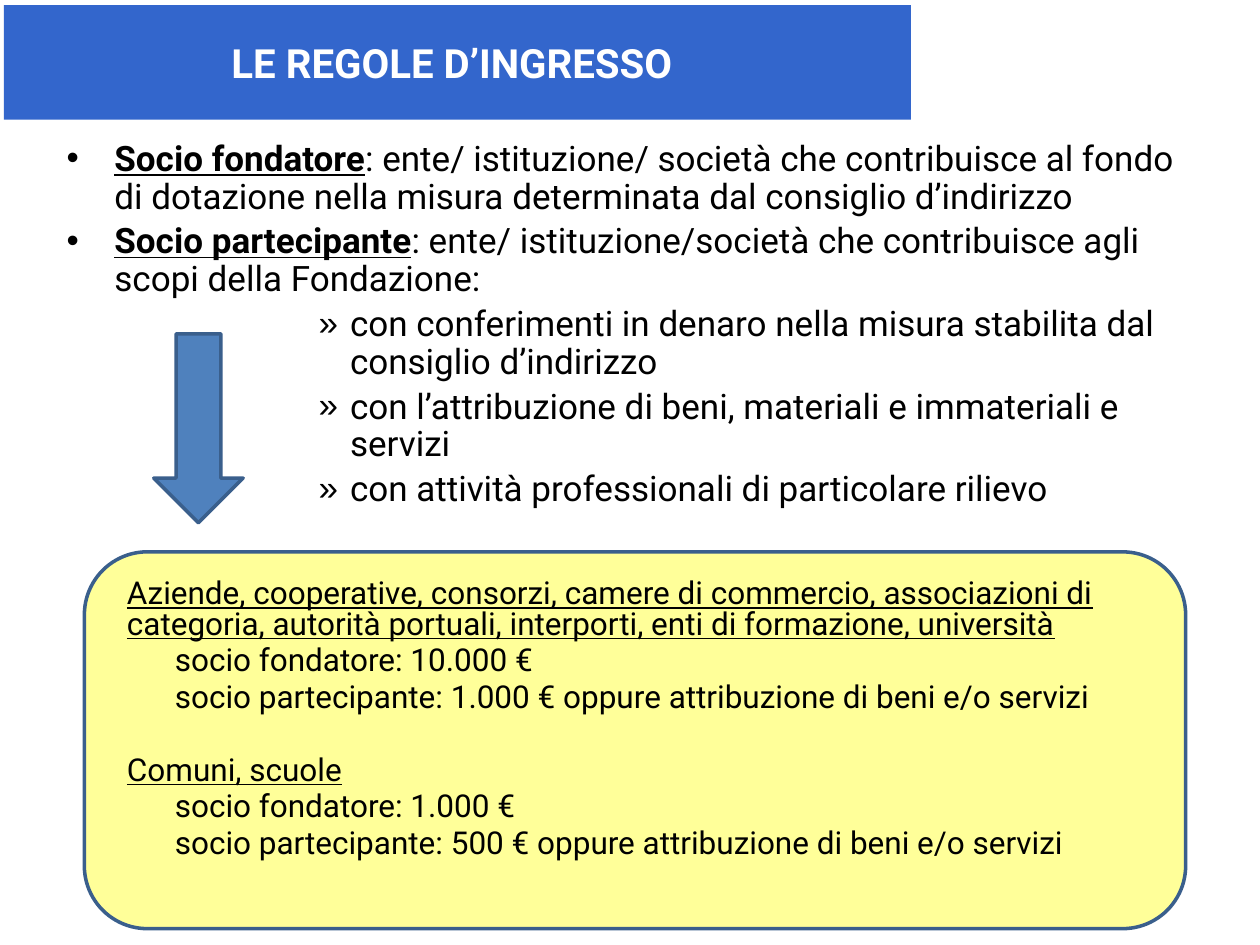
from dataclasses import dataclass

from lxml import etree
from pptx import Presentation, util as u
from pptx.dml.color import RGBColor
from pptx.enum import shapes, text
from pptx.oxml.ns import qn


@dataclass(frozen=True)
class Theme:
    font: str = "Roboto"
    title_size: int = 23
    rules_size: int = 20
    fees_size: int = 18
    line_width: int = 2
    black: str = "000000"
    white: str = "FFFFFF"
    banner: str = "3366CC"
    panel: str = "FFFF99"
    arrow: str = "4F81BD"
    outline: str = "3A5F8C"


THEME = Theme()
WIDTH, HEIGHT = 10, 7.5

TITLE = "LE REGOLE D’INGRESSO "
MEMBERS = [
    ("Socio fondatore", ": ente/ istituzione/ società che contribuisce al fondo di dotazione "
     "nella misura determinata dal consiglio d’indirizzo"),
    ("Socio partecipante", ": ente/ istituzione/società che contribuisce agli scopi della Fondazione:"),
]
CONTRIBUTIONS = [
    "con conferimenti in denaro nella misura stabilita dal consiglio d’indirizzo",
    "con l’attribuzione di beni, materiali e immateriali e servizi",
    "con attività professionali di particolare rilievo",
]
FEES = [
    ("Aziende, cooperative, consorzi, camere di commercio, associazioni di categoria, "
     "autorità portuali, interporti, enti di formazione, università",
     ["socio fondatore: 10.000 €",
      "socio partecipante: 1.000 € oppure attribuzione di beni e/o servizi"]),
    ("Comuni, scuole",
     ["socio fondatore: 1.000 €",
      "socio partecipante: 500 € oppure attribuzione di beni e/o servizi"]),
]
GROUP_GAP = 24.5

PERCENT_BOXES = {
    "title": (0.3, 0.53, 72, 12.13),
    "rules": (4.3, 14.27, 90.6, 42),
    "panel": (6.7, 58.4, 87.4, 39.87),
    "fees": (9.1, 60.8, 83, 35.2),
    "arrow": (12.2, 35.33, 7.1, 20),
}


def box(name):
    extents = (WIDTH, HEIGHT, WIDTH, HEIGHT)
    return [u.Inches(share * extent / 100) for share, extent in zip(PERCENT_BOXES[name], extents)]


def paint(shape, color):
    shape.fill.solid()
    shape.fill.fore_color.rgb = RGBColor.from_string(color)


def style_run(run, size, color=THEME.black, bold=False, underline=False):
    run.font.name = THEME.font
    run.font.size = u.Pt(size)
    run.font.color.rgb = RGBColor.from_string(color)
    run.font.bold = bold
    run.font.underline = underline


def add_outlined(slide, kind, name, color):
    shape = slide.shapes.add_shape(kind, *box(name))
    shape.shadow.inherit = False
    paint(shape, color)
    shape.line.color.rgb = RGBColor.from_string(THEME.outline)
    shape.line.width = u.Pt(THEME.line_width)


def add_text(slide, name):
    frame = slide.shapes.add_textbox(*box(name)).text_frame
    frame.word_wrap = True
    return frame


def next_paragraph(frame, spacing, size, gap=None):
    first = not frame.text
    paragraph = frame.paragraphs[0] if first else frame.add_paragraph()
    paragraph.line_spacing = spacing
    paragraph.space_before = u.Pt(0 if first else gap or size * 0.2)
    return paragraph


def indent(paragraph, left, hanging=0, bullet=None):
    properties = paragraph._p.get_or_add_pPr()
    properties.set("marL", str(u.Inches(left)))
    properties.set("indent", str(-u.Inches(hanging)))
    if bullet:
        etree.SubElement(properties, qn("a:buFont")).set("typeface", "Arial")
        etree.SubElement(properties, qn("a:buChar")).set("char", bullet)


def add_title(slide):
    title = slide.shapes.title
    title.left, title.top, title.width, title.height = box("title")
    paint(title, THEME.banner)
    frame = title.text_frame
    frame.text = TITLE
    frame.auto_size = text.MSO_AUTO_SIZE.NONE
    frame.vertical_anchor = text.MSO_ANCHOR.MIDDLE
    paragraph = frame.paragraphs[0]
    paragraph.alignment = text.PP_ALIGN.CENTER
    style_run(paragraph.runs[0], THEME.title_size, THEME.white, bold=True)


def add_rules(slide):
    size = THEME.rules_size
    frame = add_text(slide, "rules")
    for member, rule in MEMBERS:
        paragraph = next_paragraph(frame, 0.9, size)
        indent(paragraph, 0.38, 0.38, "•")
        for words, strong in ((member, True), (rule, False)):
            run = paragraph.add_run()
            run.text = words
            style_run(run, size, bold=strong, underline=strong)
    for contribution in CONTRIBUTIONS:
        paragraph = next_paragraph(frame, 0.9, size)
        paragraph.level = 4
        indent(paragraph, 2.25, 0.25, "»")
        paragraph.text = contribution
        style_run(paragraph.runs[0], size)


def add_fees(slide):
    size = THEME.fees_size
    frame = add_text(slide, "fees")
    for group, fees in FEES:
        paragraph = next_paragraph(frame, 0.8, size, GROUP_GAP)
        paragraph.text = group
        style_run(paragraph.runs[0], size, underline=True)
        for fee in fees:
            paragraph = next_paragraph(frame, 0.8, size)
            indent(paragraph, 0.38)
            paragraph.text = fee
            style_run(paragraph.runs[0], size)


def main():
    presentation = Presentation()
    presentation.slide_width, presentation.slide_height = u.Inches(WIDTH), u.Inches(HEIGHT)
    slide = presentation.slides.add_slide(presentation.slide_layouts.get_by_name("Title Only"))
    add_title(slide)
    add_rules(slide)
    add_outlined(slide, shapes.MSO_SHAPE.ROUNDED_RECTANGLE, "panel", THEME.panel)
    add_fees(slide)
    add_outlined(slide, shapes.MSO_SHAPE.DOWN_ARROW, "arrow", THEME.arrow)
    presentation.save("out.pptx")


if __name__ == "__main__":
    main()
